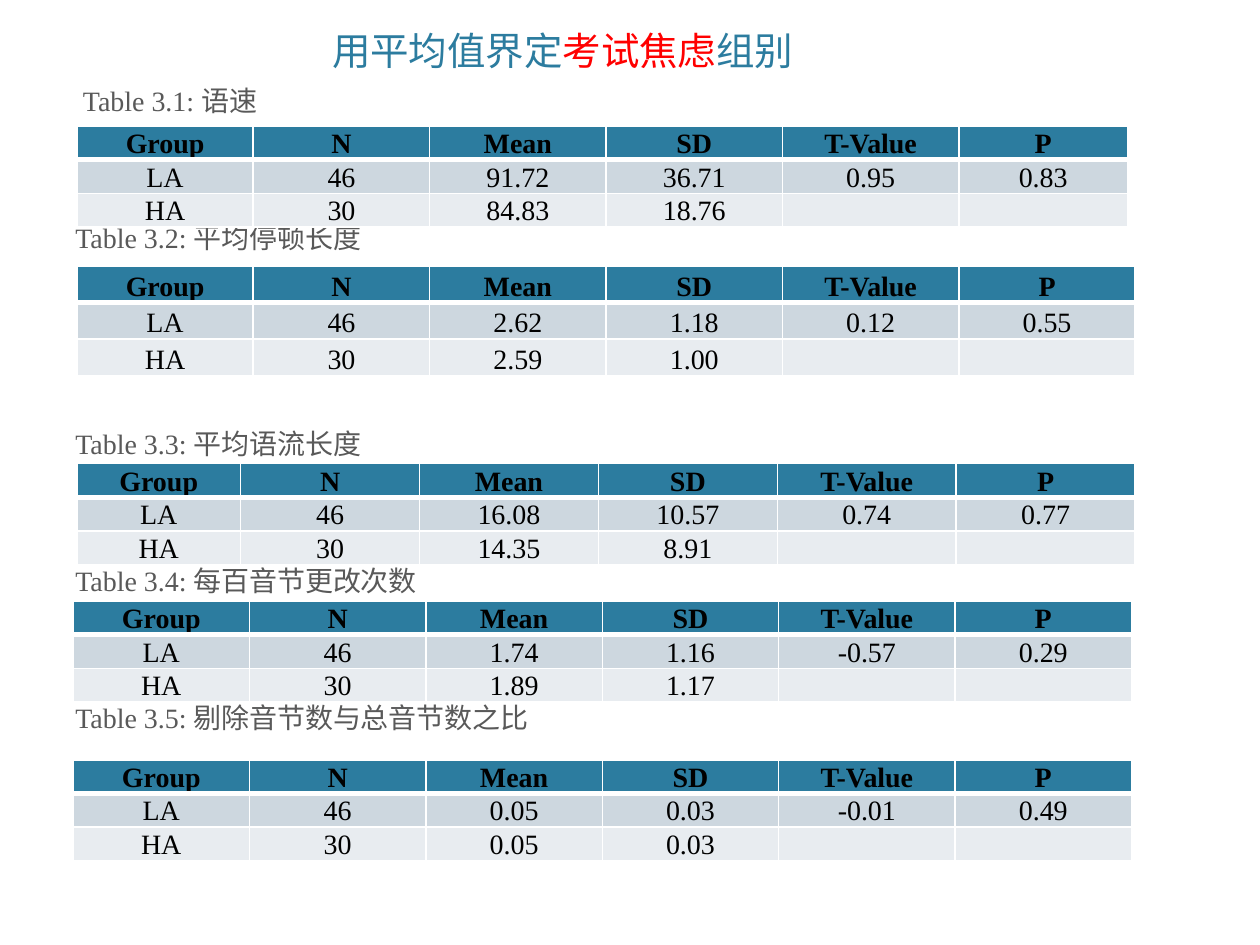
"""Build a slide of five small tables comparing low and high test anxiety groups."""
from lxml.etree import SubElement
from pptx import Presentation
from pptx.dml.color import RGBColor
from pptx.enum.text import MSO_ANCHOR, PP_ALIGN
from pptx.oxml.ns import qn
from pptx.util import Inches, Pt

SERIF, SANS = "Times New Roman", "Noto Sans CJK SC"
BLUE, RED, GREY, BLACK, WHITE = "2C7C9F", "FF0000", "595959", "000000", "FFFFFF"
FILLS = [BLUE, "CDD7DF", "E8ECF0"]
TITLE = [("用平均值界定", BLUE), ("考试焦虑", RED), ("组别 ", BLUE)]
HEAD = ["Group", "N", "Mean", "SD", "T-Value", "P"]
LINE = 19
CAPTIONS = [
    ("Table 3.1: 语速", 0.39, 0),
    ("Table 3.2: 平均停顿长度", 0.33, 59.3),
    ("Table 3.3: 平均语流长度", 0.33, 98.7),
    ("Table 3.4: 每百音节更改次数", 0.33, 59.3),
    ("Table 3.5: 剔除音节数与总音节数之比", 0.33, 59.3),
]
TABLES = [
    {"at": (0.61, 1), "row": 0.25, "cols": [1.4] * 5 + [1.34],
     "LA": ["91.72", "36.71", "0.95", "0.83"], "HA": ["84.83", "18.76"]},
    {"at": (0.61, 2.11), "row": 0.29, "cols": [1.4] * 6,
     "LA": ["2.62", "1.18", "0.12", "0.55"], "HA": ["2.59", "1.00"]},
    {"at": (0.61, 3.68), "row": 0.25, "cols": [1.3] + [1.42] * 5,
     "LA": ["16.08", "10.57", "0.74", "0.77"], "HA": ["14.35", "8.91"]},
    {"at": (0.58, 4.77), "row": 0.25, "cols": [1.4] * 6,
     "LA": ["1.74", "1.16", "-0.57", "0.29"], "HA": ["1.89", "1.17"]},
    {"at": (0.58, 6.03), "row": 0.25, "cols": [1.4] * 6,
     "LA": ["0.05", "0.03", "-0.01", "0.49"], "HA": ["0.05", "0.03"]},
]
CELL = {"margin_left": Inches(0.07), "margin_right": Inches(0.07),
        "margin_top": 0, "margin_bottom": 0, "vertical_anchor": MSO_ANCHOR.BOTTOM}


def paint(color, hue):
    color.rgb = RGBColor.from_string(hue)


def apply(item, values):
    for name, value in values.items():
        setattr(item, name, value)


def write(par, text, hue, size, face, bold=False):
    run = par.add_run()
    run.text = text
    apply(run.font, {"size": Pt(size), "name": face, "bold": bold})
    paint(run.font.color, hue)
    SubElement(run.font._element, qn("a:ea"), typeface=SANS)


def add_box(slide, left, top, width, height, anchor):
    frame = slide.shapes.add_textbox(*map(Inches, (left, top, width, height))).text_frame
    apply(frame, {"word_wrap": True, "vertical_anchor": anchor})
    return frame


def add_edges(cell, row):
    props = cell._tc.get_or_add_tcPr()
    wide = {0: "lnB", 1: "lnT"}.get(row)
    for side in ("lnL", "lnR", "lnT", "lnB"):
        edge = SubElement(props, qn("a:" + side), w=str(Pt(3 if side == wide else 1)))
        SubElement(SubElement(edge, qn("a:solidFill")), qn("a:srgbClr"), val=WHITE)


def fill_cell(cell, text, row):
    apply(cell, CELL)
    add_edges(cell, row)
    cell.fill.solid()
    paint(cell.fill.fore_color, FILLS[row])
    par = cell.text_frame.paragraphs[0]
    par.alignment = PP_ALIGN.CENTER
    if text:
        write(par, text, BLACK, 16, SERIF, row == 0)
    else:
        SubElement(par._p, qn("a:endParaRPr"), sz="1600")


def add_grid(slide, data):
    rows = [HEAD, ["LA", "46"] + data["LA"], ["HA", "30"] + data["HA"] + ["", ""]]
    size = (sum(data["cols"]), data["row"] * len(rows))
    table = slide.shapes.add_table(len(rows), len(HEAD), *map(Inches, data["at"] + size)).table
    for col, width in zip(table.columns, data["cols"]):
        col.width = Inches(width)
    for r, texts in enumerate(rows):
        table.rows[r].height = Inches(data["row"])
        for c, text in enumerate(texts):
            fill_cell(table.cell(r, c), text, r)


def main():
    deck = Presentation()
    apply(deck, {"slide_width": Inches(10), "slide_height": Inches(7.5)})
    slide = deck.slides.add_slide(deck.slide_layouts[6])

    par = add_box(slide, 0, -0.62, 9, 1.25, MSO_ANCHOR.BOTTOM).paragraphs[0]
    par.alignment = PP_ALIGN.CENTER
    for text, hue in TITLE:
        write(par, text, hue, 22, SANS)

    frame = add_box(slide, 0.17, 0.62, 9, 6.16, MSO_ANCHOR.TOP)
    for i, (text, indent, gap) in enumerate(CAPTIONS):
        par = frame.add_paragraph() if i else frame.paragraphs[0]
        apply(par, {"line_spacing": Pt(LINE), "space_before": Pt(gap)})
        par._p.get_or_add_pPr().set("marL", str(Inches(indent)))
        write(par, text, GREY, 16, SERIF)

    for data in TABLES:
        add_grid(slide, data)
    deck.save("out.pptx")


if __name__ == "__main__":
    main()
